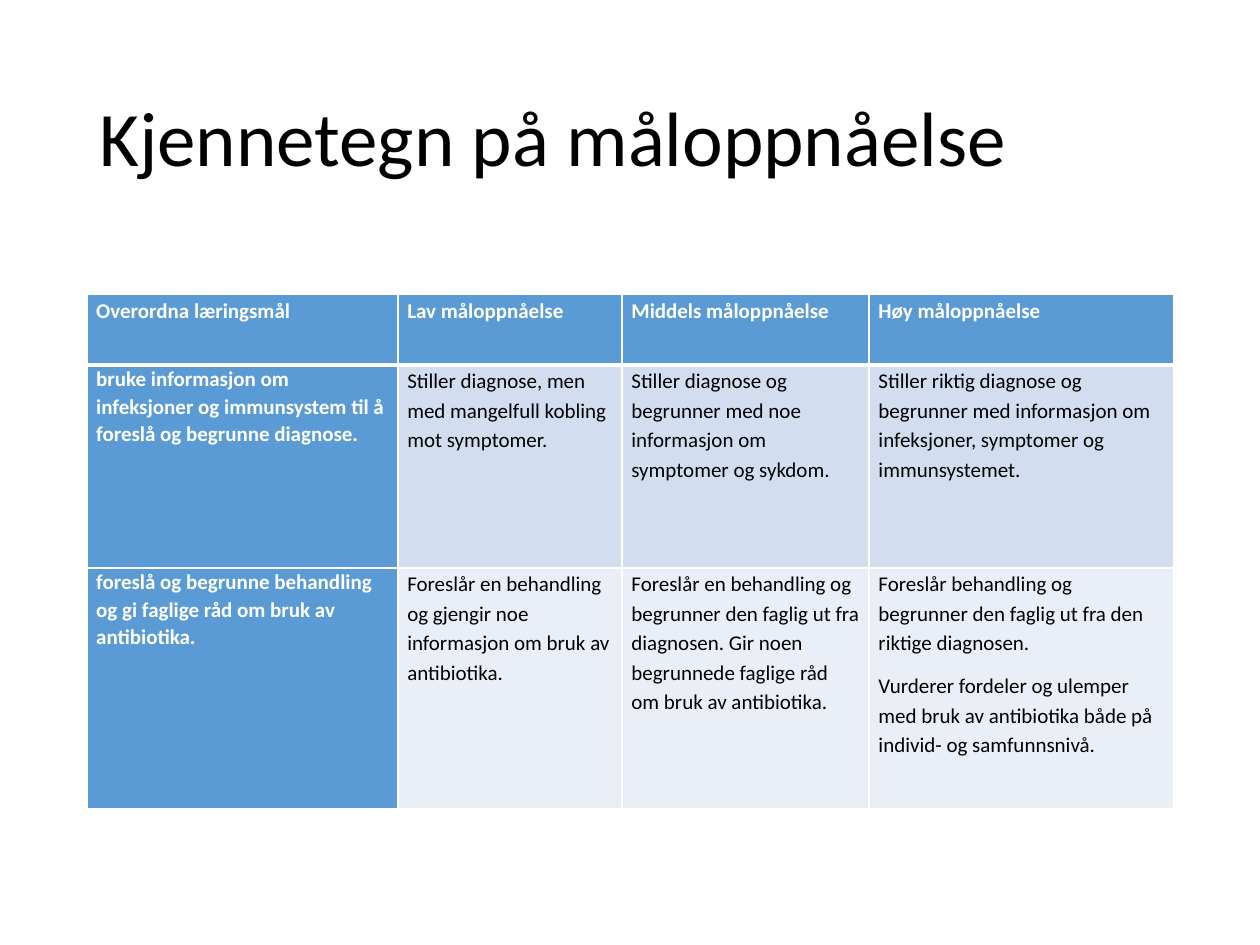
from dataclasses import dataclass

from lxml import etree
from pptx import Presentation
from pptx.dml.color import RGBColor
from pptx.enum.text import MSO_ANCHOR
from pptx.oxml.ns import qn
from pptx.slide import Slide
from pptx.table import _Cell
from pptx.text.text import _Paragraph
from pptx.util import Cm, Pt

MIDDLE = MSO_ANCHOR.MIDDLE
TOP = MSO_ANCHOR.TOP
FONT = "Calibri"
COLORS = {
    "text": "000000",
    "light": "FFFFFF",
    "accent": "5B9BD5",
    "odd_row": "D2DEEF",
    "even_row": "EAEFF7",
}
LEFT, WIDTH = Cm(1.75), Cm(21.89)
COLUMN_WIDTHS = (6.27, 4.52, 4.98, 6.15)
HEADINGS = (
    "Overordna læringsmål",
    "Lav måloppnåelse",
    "Middels måloppnåelse",
    "Høy måloppnåelse",
)


@dataclass(frozen=True)
class Row:
    height: float
    texts: tuple[str, ...]
    fill: str


ROWS = (
    Row(1.42, HEADINGS, "accent"),
    Row(
        4.09,
        (
            "bruke informasjon om infeksjoner og immunsystem til å foreslå og begrunne diagnose.",
            "Stiller diagnose, men med mangelfull kobling mot symptomer.",
            "Stiller diagnose og begrunner med noe informasjon om symptomer og sykdom.",
            "Stiller riktig diagnose og begrunner med informasjon om infeksjoner, symptomer og immunsystemet.",
        ),
        "odd_row",
    ),
    Row(
        4.85,
        (
            "foreslå og begrunne behandling og gi faglige råd om bruk av antibiotika.",
            "Foreslår en behandling og gjengir noe informasjon om bruk av antibiotika.",
            "Foreslår en behandling og begrunner den faglig ut fra diagnosen. "
            "Gir noen begrunnede faglige råd om bruk av antibiotika.",
            "Foreslår behandling og begrunner den faglig ut fra den riktige diagnosen.\n"
            "Vurderer fordeler og ulemper med bruk av antibiotika både på individ- og samfunnsnivå.",
        ),
        "even_row",
    ),
)


def style_paragraph(
    paragraph: _Paragraph, size: float, color: str, spacing: float, bold: bool = False
) -> None:
    paragraph.line_spacing = spacing
    font = paragraph.font
    font.name, font.size, font.bold = FONT, Pt(size), bold
    font.color.rgb = RGBColor.from_string(COLORS[color])


def set_borders(cell: _Cell, top: float, bottom: float) -> None:
    properties = cell._tc.get_or_add_tcPr()
    widths = {"a:lnL": 1, "a:lnR": 1, "a:lnT": top, "a:lnB": bottom}
    for position, (tag, width) in enumerate(widths.items()):
        border = etree.Element(qn(tag), w=str(Pt(width)))
        fill = etree.SubElement(border, qn("a:solidFill"))
        etree.SubElement(fill, qn("a:srgbClr"), val=COLORS["light"])
        properties.insert(position, border)


def fill_cell(cell: _Cell, text: str, fill: str, is_header: bool, is_goal: bool) -> None:
    emphasized = is_header or is_goal
    cell.fill.solid()
    cell.fill.fore_color.rgb = RGBColor.from_string(COLORS["accent" if emphasized else fill])
    cell.margin_left = cell.margin_right = Cm(0.19)
    cell.margin_top = cell.margin_bottom = 0
    cell.vertical_anchor = TOP
    cell.text = text
    spacing = 1.07 if is_goal and not is_header else 1.15
    for paragraph in cell.text_frame.paragraphs:
        style_paragraph(paragraph, 12, "light" if emphasized else "text", spacing, emphasized)
        paragraph.space_after = Pt(8)


def add_title(slide: Slide, text: str) -> None:
    title = slide.shapes.add_textbox(LEFT, Cm(1.02), WIDTH, Cm(3.68))
    frame = title.text_frame
    frame.word_wrap = True
    frame.vertical_anchor = MIDDLE
    frame.text = text
    style_paragraph(frame.paragraphs[0], 44, "text", 0.9)


def add_criteria_table(slide: Slide) -> None:
    height = Cm(sum(row.height for row in ROWS))
    criteria = slide.shapes.add_table(
        len(ROWS), len(COLUMN_WIDTHS), LEFT, Cm(5.94), WIDTH, height
    ).table
    for column, width in zip(criteria.columns, COLUMN_WIDTHS):
        column.width = Cm(width)
    for row_index, row in enumerate(ROWS):
        criteria.rows[row_index].height = Cm(row.height)
        for column_index, text in enumerate(row.texts):
            cell = criteria.cell(row_index, column_index)
            fill_cell(cell, text, row.fill, row_index == 0, column_index == 0)
            set_borders(cell, 3 if row_index == 1 else 1, 3 if row_index == 0 else 1)


def main() -> None:
    presentation = Presentation()
    presentation.slide_width, presentation.slide_height = Cm(25.4), Cm(19.05)
    slide = presentation.slides.add_slide(presentation.slide_layouts[6])
    add_title(slide, "Kjennetegn på måloppnåelse")
    add_criteria_table(slide)
    presentation.save("out.pptx")


if __name__ == "__main__":
    main()
